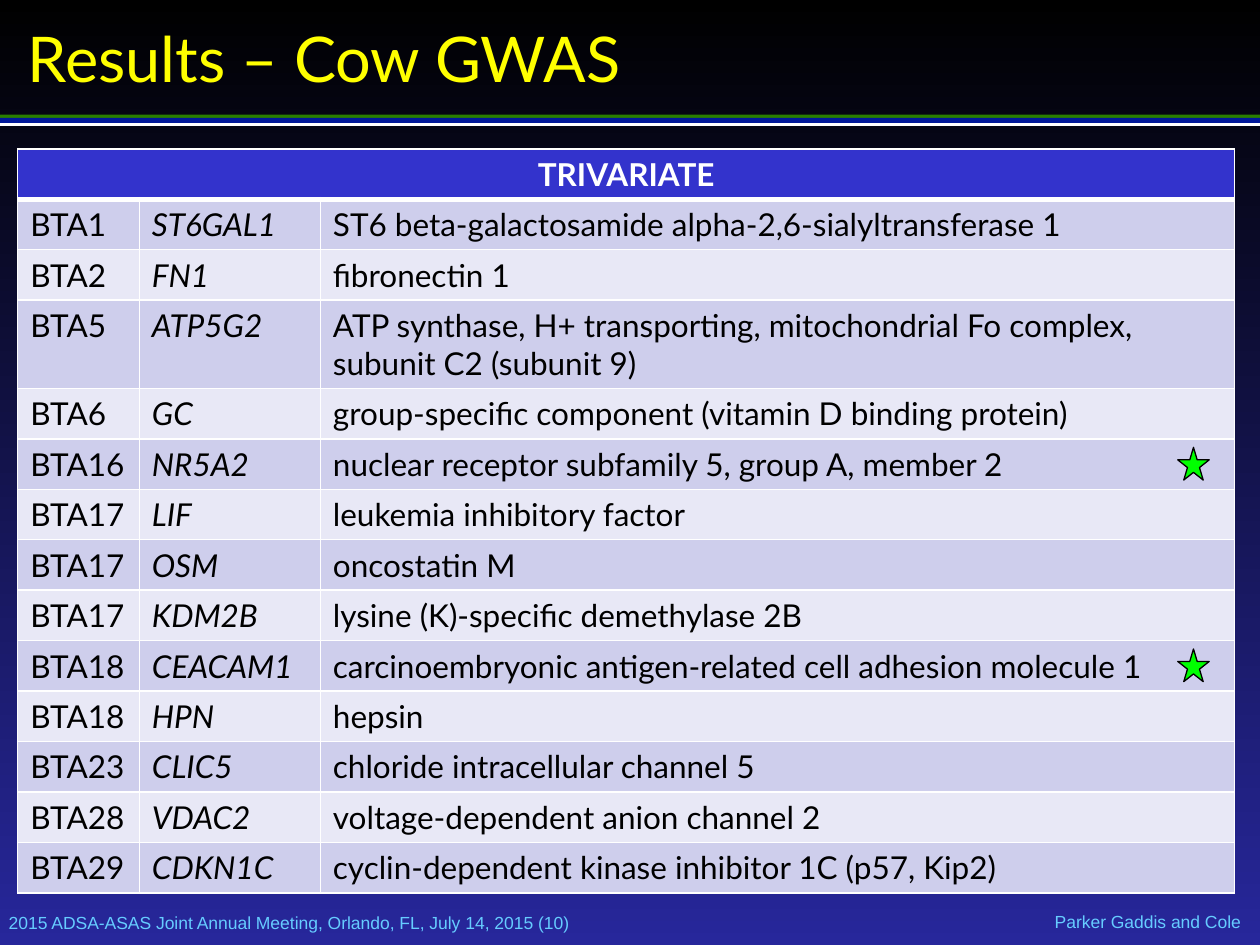
from typing import Any, NamedTuple

from lxml.etree import SubElement
from pptx import Presentation
from pptx.dml.color import RGBColor
from pptx.enum.shapes import MSO_SHAPE
from pptx.enum.text import MSO_ANCHOR, MSO_AUTO_SIZE, PP_ALIGN
from pptx.oxml.ns import qn
from pptx.util import Pt


class Gene(NamedTuple):
    chromosome: str
    symbol: str
    description: str
    lines: int = 1
    starred: bool = False


class Band(NamedTuple):
    top: float
    height: float
    color: str


class Footer(NamedTuple):
    wording: str
    left: float
    top: float
    width: float
    alignment: PP_ALIGN


GENES = [
    Gene("BTA1", "ST6GAL1", "ST6 beta-galactosamide alpha-2,6-sialyltransferase 1"),
    Gene("BTA2", "FN1", "fibronectin 1"),
    Gene("BTA5", "ATP5G2", "ATP synthase, H+ transporting, mitochondrial Fo complex, "
         "subunit C2 (subunit 9)", lines=2),
    Gene("BTA6", "GC", "group-specific component (vitamin D binding protein)"),
    Gene("BTA16", "NR5A2", "nuclear receptor subfamily 5, group A, member 2", starred=True),
    Gene("BTA17", "LIF", "leukemia inhibitory factor"),
    Gene("BTA17", "OSM", "oncostatin M"),
    Gene("BTA17", "KDM2B", "lysine (K)-specific demethylase 2B"),
    Gene("BTA18", "CEACAM1", "carcinoembryonic antigen-related cell adhesion molecule 1",
         starred=True),
    Gene("BTA18", "HPN", "hepsin"),
    Gene("BTA23", "CLIC5", "chloride intracellular channel 5"),
    Gene("BTA28", "VDAC2", "voltage-dependent anion channel 2"),
    Gene("BTA29", "CDKN1C", "cyclin-dependent kinase inhibitor 1C (p57, Kip2)"),
]
BANDS = [Band(65.5, 2.2, "2A7E00"), Band(69.8, 2.2, "FFFFFF"), Band(67.4, 2.9, "001799")]
FOOTERS = [
    Footer("Parker Gaddis and Cole", 573, 520.6, 136, PP_ALIGN.RIGHT),
    Footer("2015 ADSA-ASAS Joint Annual Meeting, Orlando, FL, July 14, 2015 (10)",
           5, 521.3, 582.5, PP_ALIGN.LEFT),
]
SLIDE_WIDTH, SLIDE_HEIGHT = 720, 540
TABLE_LEFT, TABLE_TOP = 10.1, 85
COLUMN_WIDTHS = [69.5, 103.5, 522.5]
ROW_HEIGHT, EXTRA_LINE = 28.8, 21.6
STAR_LEFT, STAR_WIDTH, STAR_HEIGHT = 673, 18, 18.7
STRIPES = ["CECEEC", "E8E8F6"]
TITLE_FONT = {"name": "Lato", "size": Pt(36)}
FOOTER_FONT = {"name": "Arial", "size": Pt(10)}
HEADER_FONT = {"name": "Lato", "size": Pt(18), "bold": True}
GENE_FONT = {"name": "Lato", "size": Pt(18), "bold": False}
NO_MARGINS = dict.fromkeys(["margin_left", "margin_top", "margin_right", "margin_bottom"], 0)


def rgb(color: str) -> RGBColor:
    return RGBColor.from_string(color)


def apply(target: Any, values: dict[str, Any]) -> None:
    for attribute, value in values.items():
        setattr(target, attribute, value)


def write(frame: Any, wording: str, font: dict[str, Any], color: str,
          alignment: PP_ALIGN = PP_ALIGN.LEFT) -> None:
    paragraph = frame.paragraphs[0]
    paragraph.alignment = alignment
    run = paragraph.add_run()
    run.text = wording
    apply(run.font, font)
    run.font.color.rgb = rgb(color)


def paint_background(slide: Any) -> None:
    fill = slide.background.fill
    fill.gradient()
    fill.gradient_angle = 270
    for stop, color in zip(fill.gradient_stops, ["000000", "27279B"]):
        stop.color.rgb = rgb(color)


def add_band(slide: Any, band: Band) -> None:
    stripe = slide.shapes.add_shape(
        MSO_SHAPE.RECTANGLE, 0, Pt(band.top), Pt(SLIDE_WIDTH), Pt(band.height))
    stripe.shadow.inherit = False
    stripe.fill.solid()
    stripe.fill.fore_color.rgb = rgb(band.color)
    stripe.line.fill.background()


def add_footer(slide: Any, footer: Footer) -> None:
    frame = slide.shapes.add_textbox(
        Pt(footer.left), Pt(footer.top), Pt(footer.width), Pt(12)).text_frame
    apply(frame, NO_MARGINS | {"word_wrap": True, "vertical_anchor": MSO_ANCHOR.MIDDLE})
    write(frame, footer.wording, FOOTER_FONT, "66CCFF", footer.alignment)


def add_star(slide: Any, row_top: float) -> None:
    top = row_top + (ROW_HEIGHT - STAR_HEIGHT) / 2
    star = slide.shapes.add_shape(
        MSO_SHAPE.STAR_5_POINT, Pt(STAR_LEFT), Pt(top), Pt(STAR_WIDTH), Pt(STAR_HEIGHT))
    star.shadow.inherit = False
    star.fill.solid()
    star.fill.fore_color.rgb = rgb("00FF00")
    star.line.color.rgb = rgb("000000")
    star.line.width = Pt(0.75)


def style_cell(cell: Any, color: str, top: float = 1, bottom: float = 1) -> None:
    """Fill the cell and give it white borders of the given widths."""
    cell.fill.solid()
    cell.fill.fore_color.rgb = rgb(color)
    properties = cell._tc.get_or_add_tcPr()
    widths = {"a:lnL": 1, "a:lnR": 1, "a:lnT": top, "a:lnB": bottom}
    for position, (tag, width) in enumerate(widths.items()):
        border = SubElement(properties, qn(tag), w=str(Pt(width)))
        SubElement(SubElement(border, qn("a:solidFill")), qn("a:srgbClr"), val="FFFFFF")
        properties.insert(position, border)


def add_gene_table(slide: Any) -> None:
    heights = [ROW_HEIGHT] + [ROW_HEIGHT + EXTRA_LINE * (gene.lines - 1) for gene in GENES]
    table = slide.shapes.add_table(
        len(heights), len(COLUMN_WIDTHS), Pt(TABLE_LEFT), Pt(TABLE_TOP),
        Pt(sum(COLUMN_WIDTHS)), Pt(sum(heights))).table
    for column, width in zip(table.columns, COLUMN_WIDTHS):
        column.width = Pt(width)
    for row, height in zip(table.rows, heights):
        row.height = Pt(height)

    for cell in table.rows[0].cells:
        style_cell(cell, "3333CC", bottom=3)
    header = table.cell(0, 0)
    header.merge(table.cell(0, len(COLUMN_WIDTHS) - 1))
    write(header.text_frame, "TRIVARIATE", HEADER_FONT, "FFFFFF", PP_ALIGN.CENTER)

    for index, gene in enumerate(GENES, start=1):
        wordings = [gene.chromosome, gene.symbol, gene.description]
        for cell, wording in zip(table.rows[index].cells, wordings):
            style_cell(cell, STRIPES[(index - 1) % 2], top=3 if index == 1 else 1)
            font = GENE_FONT | {"italic": wording == gene.symbol}
            write(cell.text_frame, wording, font, "000000")
        if gene.starred:
            add_star(slide, TABLE_TOP + sum(heights[:index]))


def main() -> None:
    presentation = Presentation()
    apply(presentation, {"slide_width": Pt(SLIDE_WIDTH), "slide_height": Pt(SLIDE_HEIGHT)})
    slide = presentation.slides.add_slide(presentation.slide_layouts[5])
    paint_background(slide)
    for band in BANDS:
        add_band(slide, band)
    for footer in FOOTERS:
        add_footer(slide, footer)

    title = slide.shapes.title
    apply(title, {"left": Pt(12.2), "top": 0, "width": Pt(695.5), "height": Pt(66)})
    apply(title.text_frame, dict.fromkeys(NO_MARGINS, Pt(3.6)) | {
        "word_wrap": True, "auto_size": MSO_AUTO_SIZE.NONE,
        "vertical_anchor": MSO_ANCHOR.MIDDLE})
    write(title.text_frame, "Results – Cow GWAS", TITLE_FONT, "FFFF00")

    add_gene_table(slide)
    presentation.save("out.pptx")


if __name__ == "__main__":
    main()
